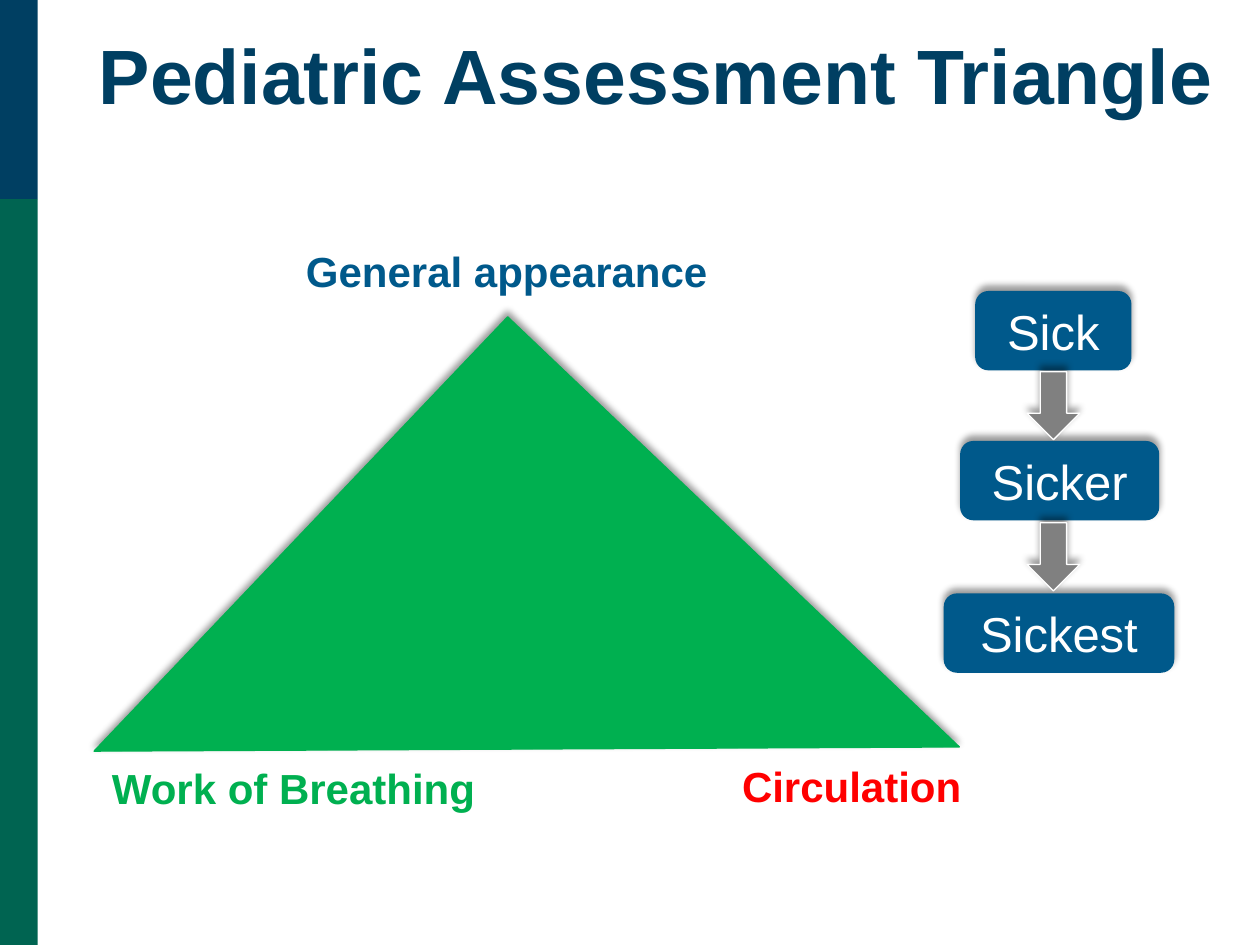
from lxml import etree
from pptx import Presentation
from pptx.dml.color import RGBColor
from pptx.enum.shapes import MSO_SHAPE as SHAPE
from pptx.enum.text import MSO_ANCHOR as ANCHOR, PP_ALIGN as ALIGN
from pptx.oxml.ns import qn
from pptx.util import Inches, Pt

NAVY = RGBColor(0x00, 0x3F, 0x62)
TEAL = RGBColor(0x00, 0x64, 0x51)
BLUE = RGBColor(0x00, 0x59, 0x8B)
GREEN = RGBColor(0x00, 0xB0, 0x50)
RED = RGBColor(0xFF, 0x00, 0x00)
GRAY = RGBColor(0x80, 0x80, 0x80)
WHITE = RGBColor(0xFF, 0xFF, 0xFF)


def add_shadow(sp):
    """Give a shape a soft shadow cast upwards."""
    effects = sp._element.spPr.find(qn("a:effectLst"))
    shadow = etree.SubElement(effects, qn("a:outerShdw"), blurRad=str(Pt(4)),
                              dist=str(Pt(3)), dir="16200000", rotWithShape="0")
    color = etree.SubElement(shadow, qn("a:srgbClr"), val="000000")
    etree.SubElement(color, qn("a:alpha"), val="40000")


def add_block(s, kind, box, fill, line=None, rotation=0, shadow=True):
    """Add a filled preset shape in a box of inches."""
    sp = s.shapes.add_shape(kind, *map(Inches, box))
    sp.rotation = rotation
    sp.shadow.inherit = False
    sp.fill.solid()
    sp.fill.fore_color.rgb = fill
    if line is None:
        sp.line.fill.background()
    else:
        sp.line.color.rgb = line
        sp.line.width = Pt(0.75)
    if shadow:
        add_shadow(sp)
    return sp


def write_text(sp, text, size, color, bold=False, align=ALIGN.CENTER, anchor=ANCHOR.TOP):
    """Write one styled line of text into a shape."""
    tf = sp.text_frame
    tf.word_wrap = True
    tf.vertical_anchor = anchor
    p = tf.paragraphs[0]
    p.alignment = align
    r = p.add_run()
    r.text = text
    r.font.name = "Arial"
    r.font.size = Pt(size)
    r.font.bold = bold
    r.font.color.rgb = color


def add_label(s, box, text, size, color, **style):
    """Add a bold text box in a box of inches."""
    sp = s.shapes.add_textbox(*map(Inches, box))
    write_text(sp, text, size, color, bold=True, **style)


def add_side_bar(s, left, top, width, height):
    """Draw the two-colour bar along the slide edge."""
    split = 1.58
    add_block(s, SHAPE.RECTANGLE, (left, top, width, split), NAVY, shadow=False)
    add_block(s, SHAPE.RECTANGLE, (left, top + split, width, height - split), TEAL, shadow=False)


def add_triangle(s, left, top):
    """Draw the assessment triangle with a label at each corner."""
    add_block(s, SHAPE.RIGHT_TRIANGLE, (left + 1.22, top + 1.57, 4.76, 4.95),
              GREEN, GREEN, rotation=133.6)
    corners = [
        (1.75, 0, "General appearance", BLUE, ALIGN.LEFT),
        (4.43, 4.09, "Circulation", RED, ALIGN.CENTER),
        (0, 4.1, "Work of Breathing", GREEN, ALIGN.CENTER),
    ]
    for dx, dy, text, color, align in corners:
        add_label(s, (left + dx, top + dy, 3.5, 0.5), text, 24, color, align=align)


def add_severity_chain(s, left, top):
    """Draw the severity steps and the arrows that join them."""
    steps = [
        (0.25, 0, 1.24, "Sick"),
        (0.13, 1.19, 1.58, "Sicker"),
        (0, 2.4, 1.83, "Sickest"),
    ]
    for dx, dy, width, text in steps:
        sp = add_block(s, SHAPE.ROUNDED_RECTANGLE, (left + dx, top + dy, width, 0.63), BLUE)
        write_text(sp, text, 28, WHITE, anchor=ANCHOR.MIDDLE)
    for dy in (0.7, 1.9):
        add_block(s, SHAPE.RIGHT_ARROW, (left + 0.6, top + dy, 0.54, 0.42),
                  GRAY, WHITE, rotation=90)


def main():
    """Build and save the slide."""
    prs = Presentation()
    prs.slide_width, prs.slide_height = Inches(10), Inches(7.5)
    s = prs.slides.add_slide(prs.slide_layouts[6])
    add_side_bar(s, 0, 0, 0.3, 7.5)
    add_label(s, (0.46, 0.05, 9.5, 0.95), "Pediatric Assessment Triangle", 44, NAVY,
              anchor=ANCHOR.BOTTOM)
    add_triangle(s, 0.58, 1.9)
    add_severity_chain(s, 7.49, 2.31)
    prs.save("out.pptx")


if __name__ == "__main__":
    main()
